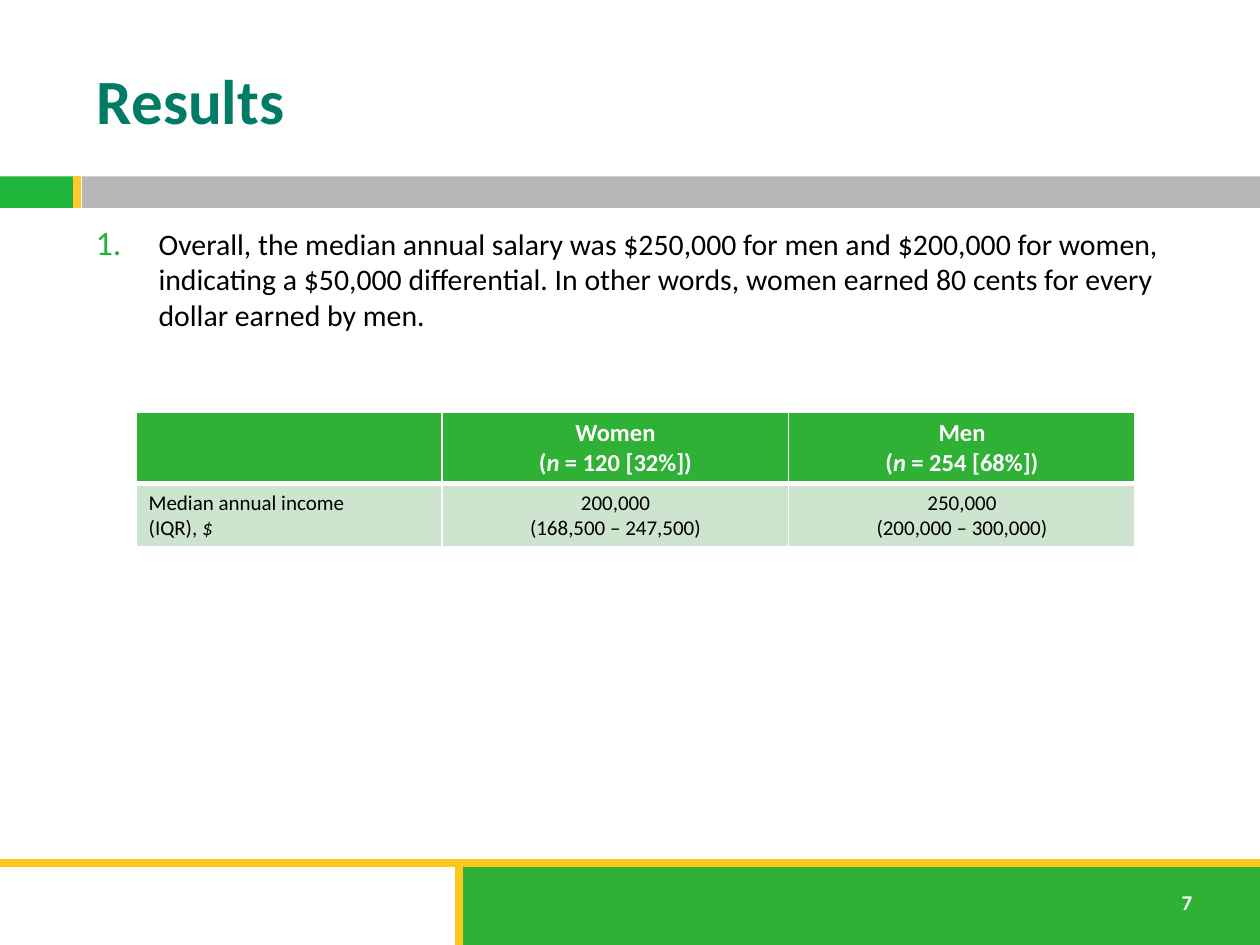
from lxml.etree import SubElement
from pptx import Presentation
from pptx.dml.color import RGBColor
from pptx.enum.shapes import MSO_CONNECTOR as Connector, MSO_SHAPE as Shape
from pptx.enum.text import MSO_ANCHOR as Anchor, PP_ALIGN as Align
from pptx.oxml.ns import qn
from pptx.util import Inches, Pt

FONT = "Calibri"
GREEN, LIME, PALE, GREY = "2EB135", "1EB53A", "CDE4CE", "B5B7B4"
TEAL, WHITE, BLACK = "007C66", "FFFFFF", "000000"
GOLD, AMBER = "FFC61E", "FFC82E"

TITLE = "Results"
FINDING = ("Overall, the median annual salary was $250,000 for men and $200,000 "
           "for women, indicating a $50,000 differential. In other words, women "
           "earned 80 cents for every dollar earned by men.")
PAGE_NUMBER = "7"

# Each cell is a list of lines; text between asterisks is italic
TABLE = [
    [[], ["Women", "(*n* = 120 [32%])"], ["Men", "(*n* = 254 [68%])"]],
    [["Median annual income", "(IQR), *$*"],
     ["200,000", "(168,500 – 247,500)"],
     ["250,000", "(200,000 – 300,000)"]],
]
COLUMN_WIDTHS = [2.43, 2.75, 2.75]
ROW_HEIGHTS = [0.57, 0.5]
# fill, text colour, size, bold, bottom border width
ROW_STYLES = [(GREEN, WHITE, 14, True, 3), (PALE, BLACK, 12, False, 1)]

BARS = [  # left, top, width, height, colour
    (0, 1.4, 0.58, 0.25, LIME),
    (0.65, 1.4, 9.35, 0.25, GREY),
    (3.62, 6.84, 6.38, 0.66, GREEN),
]
RULES = [  # start x, start y, end x, end y, colour
    (0, 6.85, 10, 6.85, GOLD),
    (3.64, 6.86, 3.64, 7.5, GOLD),
    (0.61, 1.4, 0.61, 1.65, AMBER),
]


def rgb(color):
    return RGBColor.from_string(color)


def set_font(para, size, color, bold=False):
    font = para.font
    font.name, font.size, font.bold = FONT, Pt(size), bold
    font.color.rgb = rgb(color)


def add_text(page, place, text, anchor=Anchor.TOP):
    box = page.shapes.add_textbox(*map(Inches, place))
    frame = box.text_frame
    frame.word_wrap = True
    frame.vertical_anchor = anchor
    para = frame.paragraphs[0]
    para.text = text
    return para


def number_paragraph(para, indent, color, percent):
    props = para._p.get_or_add_pPr()
    props.set("marL", str(Inches(indent)))
    props.set("indent", str(-Inches(indent)))
    bullet_color = SubElement(props, qn("a:buClr"))
    SubElement(bullet_color, qn("a:srgbClr"), val=color)
    SubElement(props, qn("a:buSzPct"), val=str(percent * 1000))
    SubElement(props, qn("a:buFont"), typeface=FONT)
    SubElement(props, qn("a:buAutoNum"), type="arabicPeriod")


def set_borders(cell, bottom):
    props = cell._tc.get_or_add_tcPr()
    widths = {"a:lnL": 1, "a:lnR": 1, "a:lnT": 1, "a:lnB": bottom}
    for position, (tag, width) in enumerate(widths.items()):
        line = SubElement(props, qn(tag), w=str(Pt(width)))
        fill = SubElement(line, qn("a:solidFill"))
        SubElement(fill, qn("a:srgbClr"), val=WHITE)
        props.insert(position, line)  # borders come before the fill


def fill_cell(cell, lines, style, align):
    fill, color, size, bold, bottom = style
    cell.fill.solid()
    cell.fill.fore_color.rgb = rgb(fill)
    set_borders(cell, bottom)
    frame = cell.text_frame
    for index, line in enumerate(lines):
        para = frame.add_paragraph() if index else frame.paragraphs[0]
        para.alignment = align
        set_font(para, size, color, bold)
        for part, text in enumerate(line.split("*")):
            if text:
                span = para.add_run()
                span.text = text
                if part % 2:
                    span.font.italic = True


def main():
    deck = Presentation()
    deck.slide_width, deck.slide_height = Inches(10), Inches(7.5)
    page = deck.slides.add_slide(deck.slide_layouts[6])

    # Header and footer bands
    for *place, color in BARS:
        bar = page.shapes.add_shape(Shape.RECTANGLE, *map(Inches, place))
        bar.shadow.inherit = False
        bar.fill.solid()
        bar.fill.fore_color.rgb = rgb(color)
        bar.line.fill.background()
    for *ends, color in RULES:
        rule = page.shapes.add_connector(Connector.STRAIGHT, *map(Inches, ends))
        rule.line.width = Pt(4.5)
        rule.line.color.rgb = rgb(color)
        SubElement(rule._element.spPr, qn("a:effectLst"))

    # Page number, title and numbered finding
    set_font(add_text(page, (9.28, 7.01, 0.4, 0.3), PAGE_NUMBER), 12, WHITE, True)
    set_font(add_text(page, (0.67, 0.25, 8.92, 1.08), TITLE, Anchor.MIDDLE),
             36, TEAL, True)
    finding = add_text(page, (0.66, 1.74, 8.92, 5), FINDING)
    number_paragraph(finding, 0.5, LIME, 115)
    set_font(finding, 17, BLACK)

    # Income table
    table = page.shapes.add_table(
        len(TABLE), len(COLUMN_WIDTHS), Inches(1.08), Inches(3.27),
        Inches(sum(COLUMN_WIDTHS)), Inches(sum(ROW_HEIGHTS))).table
    for column, width in zip(table.columns, COLUMN_WIDTHS):
        column.width = Inches(width)
    for row, height, cells, style in zip(table.rows, ROW_HEIGHTS, TABLE, ROW_STYLES):
        row.height = Inches(height)
        for index, (cell, lines) in enumerate(zip(row.cells, cells)):
            fill_cell(cell, lines, style, Align.CENTER if index else Align.LEFT)

    deck.save("out.pptx")


if __name__ == "__main__":
    main()
